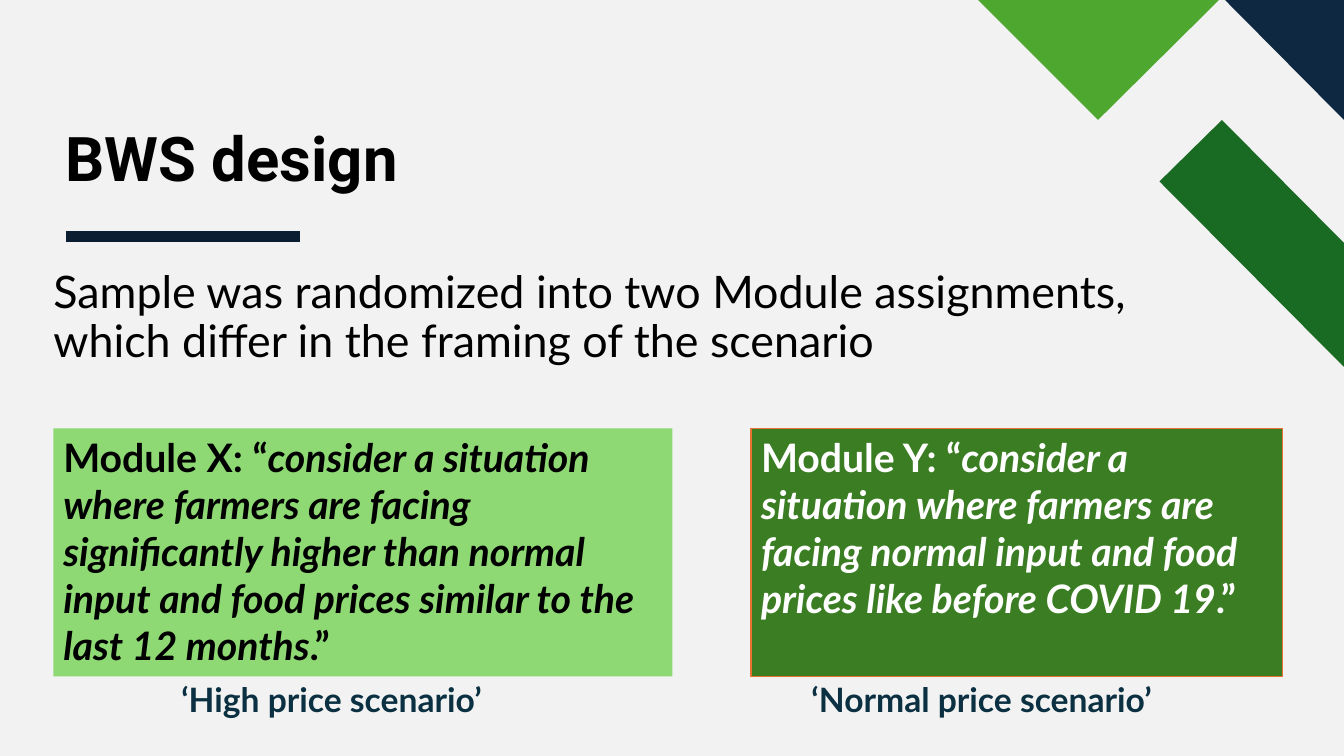
from lxml import etree
from pptx import Presentation
from pptx.dml.color import RGBColor
from pptx.enum.shapes import MSO_CONNECTOR as Connector, MSO_SHAPE as Shape
from pptx.enum.text import MSO_ANCHOR as Anchor, PP_ALIGN as Align
from pptx.oxml.ns import qn
from pptx.util import Inches, Pt

COLORS = {
    "background": "F2F2F2",
    "black": "000000",
    "white": "FFFFFF",
    "navy": "0E2841",
    "rule": "0B1E31",
    "caption": "0B3041",
    "leaf": "4EA72E",
    "forest": "196B24",
    "light_green": "8ED973",
    "dark_green": "3B7D23",
    "orange": "E97132",
}


class SlideBuilder:
    body_font = "Lato"
    title_font = "Roboto"

    def __init__(self, deck):
        self.page = deck.slides.add_slide(deck.slide_layouts[6])
        self.paint(self.page.background.fill, "background")

    def color(self, name):
        return RGBColor.from_string(COLORS[name])

    def paint(self, fill, name):
        fill.solid()
        fill.fore_color.rgb = self.color(name)

    def outline(self, shape, name=None, width=1):
        if name is None:
            shape.line.fill.background()
        else:
            shape.line.color.rgb = self.color(name)
            shape.line.width = Pt(width)

    def polygon(self, points, fill):
        corners = [(Inches(x), Inches(y)) for x, y in points]
        builder = self.page.shapes.build_freeform(*corners[0])
        builder.add_line_segments(corners[1:], close=True)
        shape = builder.convert_to_shape()
        shape.shadow.inherit = False
        self.paint(shape.fill, fill)
        self.outline(shape)

    def rule(self, left, right, top, color, width):
        line = self.page.shapes.add_connector(
            Connector.STRAIGHT, Inches(left), Inches(top), Inches(right), Inches(top))
        self.outline(line, color, width)
        etree.SubElement(line._element.spPr, qn("a:effectLst"))

    def fill_text(self, frame, spans, size, color, font=body_font, bold=False, spacing=None):
        frame.word_wrap = True
        para = frame.paragraphs[0]
        para.alignment = Align.LEFT
        para.line_spacing = spacing
        para.font.name = font
        para.font.size = Pt(size)
        para.font.bold = bold
        para.font.color.rgb = self.color(color)
        for text, italic in spans:
            span = para.add_run()
            span.text = text
            if italic:
                span.font.italic = True

    def text(self, area, words, size, color="black", margins=None, anchor=Anchor.TOP, **style):
        box = self.page.shapes.add_textbox(*map(Inches, area))
        frame = box.text_frame
        frame.vertical_anchor = anchor
        if margins:
            (frame.margin_left, frame.margin_top,
             frame.margin_right, frame.margin_bottom) = map(Inches, margins)
        self.fill_text(frame, [(words, False)], size, color, **style)

    def module(self, area, name, scenario, fill, color, border=None):
        box = self.page.shapes.add_shape(Shape.RECTANGLE, *map(Inches, area))
        box.shadow.inherit = False
        self.paint(box.fill, fill)
        self.outline(box, border)
        box.text_frame.vertical_anchor = Anchor.TOP
        spans = [(f"{name}: “", False), (scenario, True), (".”", False)]
        self.fill_text(box.text_frame, spans, 28, color, bold=True)


def main():
    deck = Presentation()
    deck.slide_width, deck.slide_height = Inches(13.33), Inches(7.5)
    slide = SlideBuilder(deck)

    slide.polygon([(13.33, 3.64), (13.33, 2.41), (12.12, 1.19), (11.5, 1.8)], "forest")
    slide.polygon([(13.33, 1.19), (13.33, 0), (12.15, 0)], "navy")
    slide.polygon([(9.7, 0), (10.89, 1.19), (12.09, 0)], "leaf")
    slide.rule(0.65, 2.98, 2.35, "rule", 8)

    slide.text((0.65, 0.3, 10.69, 1.63), "BWS design", 44, margins=(0, 0, 0, 0),
               anchor=Anchor.BOTTOM, font=slide.title_font, bold=True, spacing=0.9)
    slide.text((0.53, 2.63, 11.44, 1.24),
               "Sample was randomized into two Module assignments, "
               "which differ in the framing of the scenario",
               32, margins=(0, 0.05, 0, 0), spacing=0.9)

    slide.module((0.53, 4.25, 6.14, 2.46), "Module X",
                 "consider a situation where farmers are facing significantly higher "
                 "than normal input and food prices similar to the last 12 months",
                 "light_green", "black")
    slide.module((7.45, 4.25, 5.27, 2.46), "Module Y",
                 "consider a situation where farmers are facing normal input "
                 "and food prices like before COVID 19",
                 "dark_green", "white", "orange")

    for left, caption in ((1.7, "‘High price scenario’"), (7.95, "‘Normal price scenario’")):
        slide.text((left, 6.69, 4.15, 0.5), caption, 24, "caption", bold=True)

    deck.save("out.pptx")


if __name__ == "__main__":
    main()
